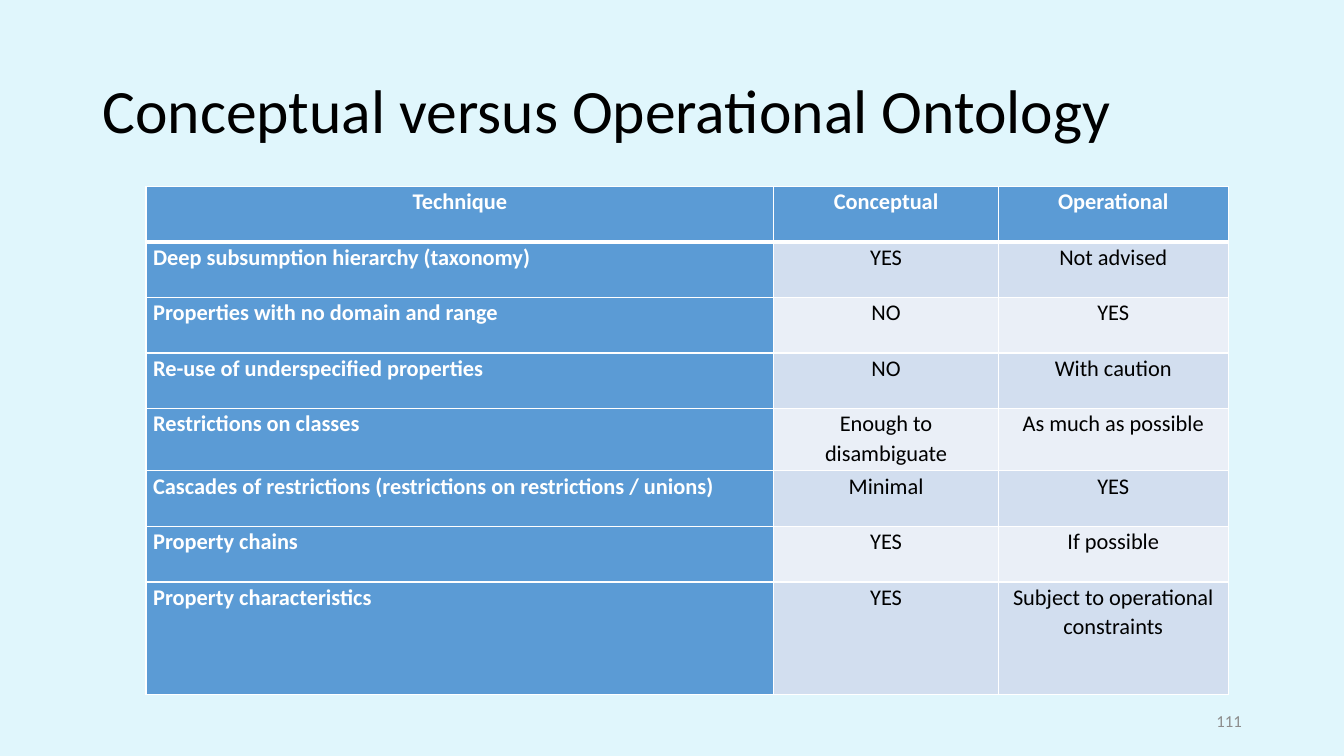
import dataclasses

import lxml.etree
import pptx
import pptx.dml.color
import pptx.enum.text
import pptx.oxml.ns
import pptx.slide
import pptx.table
import pptx.text.text
import pptx.util

Cm = pptx.util.Cm
Pt = pptx.util.Pt
RGBColor = pptx.dml.color.RGBColor
Align = pptx.enum.text.PP_ALIGN
Anchor = pptx.enum.text.MSO_ANCHOR

BACKGROUND = RGBColor(0xE0, 0xF6, 0xFC)
BLUE = RGBColor(0x5B, 0x9B, 0xD5)
BAND_DARK = RGBColor(0xD2, 0xDE, 0xEF)
BAND_LIGHT = RGBColor(0xEA, 0xEF, 0xF7)
WHITE = RGBColor(0xFF, 0xFF, 0xFF)
BLACK = RGBColor(0x00, 0x00, 0x00)
GREY = RGBColor(0x8C, 0x8C, 0x8C)

FONT = "Calibri"
COLUMN_WIDTHS = (Cm(15.82), Cm(5.66), Cm(5.79))
THIN, THICK = Pt(1), Pt(3)


@dataclasses.dataclass(frozen=True)
class TableRow:
    technique: str
    conceptual: str
    operational: str
    height: pptx.util.Length = Cm(1.4)

    @property
    def texts(self) -> tuple[str, str, str]:
        return self.technique, self.conceptual, self.operational


ROWS = (
    TableRow("Technique", "Conceptual", "Operational"),
    TableRow("Deep subsumption hierarchy (taxonomy)", "YES", "Not advised"),
    TableRow("Properties with no domain and range", "NO", "YES"),
    TableRow("Re-use of underspecified properties", "NO", "With caution"),
    TableRow("Restrictions on classes", "Enough to disambiguate", "As much as possible", Cm(1.57)),
    TableRow("Cascades of restrictions (restrictions on restrictions / unions)", "Minimal", "YES"),
    TableRow("Property chains", "YES", "If possible"),
    TableRow("Property characteristics", "YES", "Subject to operational constraints", Cm(2.84)),
)


def format_text(frame: pptx.text.text.TextFrame, text: str, size: int, color: RGBColor,
                align: Align, spacing: float = 1.0, bold: bool = False) -> None:
    frame.text = text
    frame.word_wrap = True
    para = frame.paragraphs[0]
    para.alignment = align
    para.line_spacing = spacing
    para.font.name = FONT
    para.font.size = Pt(size)
    para.font.bold = bold
    para.font.color.rgb = color


def add_border(cell: pptx.table._Cell, side: str, width: pptx.util.Length) -> None:
    properties = cell._tc.get_or_add_tcPr()
    line = lxml.etree.SubElement(properties, pptx.oxml.ns.qn(f"a:ln{side}"), w=str(int(width)))
    fill = lxml.etree.SubElement(line, pptx.oxml.ns.qn("a:solidFill"))
    lxml.etree.SubElement(fill, pptx.oxml.ns.qn("a:srgbClr"), val=str(WHITE))


def fill_cell(cell: pptx.table._Cell, text: str, row: int, column: int) -> None:
    is_heading = row == 0 or column == 0
    is_technique = row > 0 and column == 0
    cell.margin_left = cell.margin_right = Cm(0.18)
    cell.margin_top = cell.margin_bottom = 0
    format_text(cell.text_frame, text, 16, WHITE if is_heading else BLACK,
                Align.LEFT if is_technique else Align.CENTER, 1.07, is_heading)

    # Borders come before the fill; the rule under the header is thicker
    for side in "LRTB":
        under_header = (row, side) in ((0, "B"), (1, "T"))
        add_border(cell, side, THICK if under_header else THIN)
    cell.fill.solid()
    band = BAND_DARK if row % 2 else BAND_LIGHT
    cell.fill.fore_color.rgb = BLUE if is_heading else band


def add_title(page: pptx.slide.Slide) -> None:
    title = page.shapes.title
    title.left, title.top, title.width, title.height = Cm(2.33), Cm(1.01), Cm(29.21), Cm(3.68)
    format_text(title.text_frame, "Conceptual versus Operational Ontology", 44, BLACK, Align.LEFT, 0.9)
    title.text_frame.vertical_anchor = Anchor.MIDDLE


def add_comparison(page: pptx.slide.Slide) -> None:
    frame = page.shapes.add_table(len(ROWS), len(COLUMN_WIDTHS), Cm(3.68), Cm(4.7),
                                  sum(COLUMN_WIDTHS), sum(row.height for row in ROWS))
    table = frame.table
    table.first_col = True
    for column, width in zip(table.columns, COLUMN_WIDTHS):
        column.width = width
    for row_index, row in enumerate(ROWS):
        table.rows[row_index].height = row.height
        for column_index, text in enumerate(row.texts):
            fill_cell(table.cell(row_index, column_index), text, row_index, column_index)


def add_page_number(page: pptx.slide.Slide) -> None:
    box = page.shapes.add_textbox(Cm(23.93), Cm(17.65), Cm(7.62), Cm(1.02))
    format_text(box.text_frame, "111", 12, GREY, Align.RIGHT)
    box.text_frame.vertical_anchor = Anchor.MIDDLE


def main() -> None:
    deck = pptx.Presentation()
    deck.slide_width, deck.slide_height = Cm(33.87), Cm(19.05)
    page = deck.slides.add_slide(deck.slide_layouts.get_by_name("Title Only"))
    page.background.fill.solid()
    page.background.fill.fore_color.rgb = BACKGROUND

    add_title(page)
    add_comparison(page)
    add_page_number(page)
    deck.save("out.pptx")


if __name__ == "__main__":
    main()
